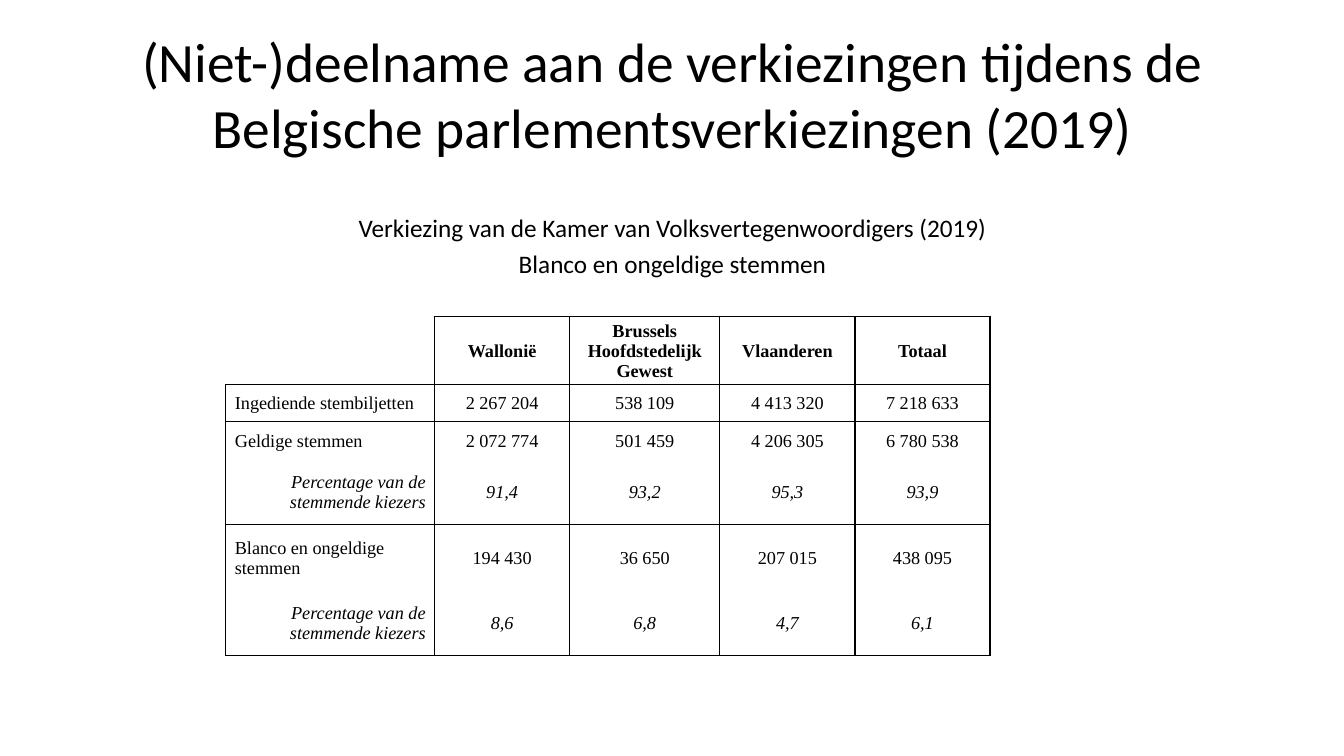
import pptx
import pptx.dml.color
import pptx.enum.text
import pptx.oxml
import pptx.oxml.ns
import pptx.util

Inches = pptx.util.Inches
Pt = pptx.util.Pt
ALIGN = pptx.enum.text.PP_ALIGN
MIDDLE = pptx.enum.text.MSO_ANCHOR.MIDDLE
COLORS = {"ink": "000000"}
SIDES = ("L", "R", "T", "B")


class Deck:
    def __init__(self, slide):
        self.slide = slide
        self.sans = "Calibri"
        self.serif = "Times New Roman"
        self.ink = pptx.dml.color.RGBColor.from_string(COLORS["ink"])

    def style(self, par, font, size, align, bold=False, slant=False):
        par.alignment = align
        for run in par.runs:
            run.font.name = font
            run.font.size = Pt(size)
            run.font.bold = bold
            run.font.italic = slant
            run.font.color.rgb = self.ink

    def text(self, lines, top, height, size, gap=0, inset=0.05, anchor=None):
        box = self.slide.shapes.add_textbox(
            Inches(0.67), Inches(top), Inches(12), Inches(height))
        frame = box.text_frame
        frame.word_wrap = True
        frame.margin_top = Inches(inset)
        frame.vertical_anchor = anchor
        frame.text = "\n".join(lines)
        for par in frame.paragraphs:
            par.space_before = Pt(gap)
            self.style(par, self.sans, size, ALIGN.CENTER)

    def border(self, cell, shown):
        props = cell._tc.get_or_add_tcPr()
        for place, side in enumerate(SIDES):
            paint = "<a:noFill/>"
            if side in shown:
                paint = f'<a:solidFill><a:srgbClr val="{COLORS["ink"]}"/></a:solidFill>'
            line = pptx.oxml.parse_xml(
                f'<a:ln{side} {pptx.oxml.ns.nsdecls("a")} w="{Pt(1)}">{paint}</a:ln{side}>')
            props.insert(place, line)

    def cell(self, cell, words, align, bold, slant, shown):
        cell.fill.background()
        cell.vertical_anchor = MIDDLE
        cell.margin_left = cell.margin_right = Inches(0.09)
        cell.margin_top, cell.margin_bottom = Inches(0.02), 0
        cell.text = words
        par = cell.text_frame.paragraphs[0]
        par.space_before = par.space_after = Pt(1)
        self.style(par, self.serif, 13, align, bold, slant)
        self.border(cell, shown)

    def table(self, rows, edges, left, top, widths, heights):
        table = self.slide.shapes.add_table(
            len(rows), len(widths), Inches(left), Inches(top),
            Inches(sum(widths)), Inches(sum(heights))).table
        table.first_row = table.horz_banding = False
        for column, width in zip(table.columns, widths):
            column.width = Inches(width)
        for row, height in zip(table.rows, heights):
            row.height = Inches(height)
        for r, row in enumerate(rows):
            share = row[0].startswith("Percentage")
            for c, words in enumerate(row):
                align = ALIGN.CENTER
                if c == 0:
                    align = ALIGN.RIGHT if share else ALIGN.LEFT
                shown = "RB" if r == c == 0 else edges[r]
                self.cell(table.cell(r, c), words, align, r == 0, share, shown)


def main():
    show = pptx.Presentation()
    show.slide_width, show.slide_height = Inches(13.33), Inches(7.5)
    deck = Deck(show.slides.add_slide(show.slide_layouts[6]))

    deck.text(["(Niet-)deelname aan de verkiezingen tijdens de "
               "Belgische parlementsverkiezingen (2019)"],
              0.3, 1.25, 39.6, anchor=MIDDLE)
    deck.text(["Verkiezing van de Kamer van Volksvertegenwoordigers (2019)",
               "Blanco en ongeldige stemmen"],
              1.75, 4.95, 18, gap=3.6, inset=0.36)

    share = "Percentage van de stemmende kiezers"
    rows = [
        ["", "Wallonië", "Brussels Hoofdstedelijk Gewest", "Vlaanderen", "Totaal"],
        ["Ingediende stembiljetten", "2 267 204", "538 109", "4 413 320", "7 218 633"],
        ["Geldige stemmen", "2 072 774", "501 459", "4 206 305", "6 780 538"],
        [share, "91,4", "93,2", "95,3", "93,9"],
        ["Blanco en ongeldige stemmen", "194 430", "36 650", "207 015", "438 095"],
        [share, "8,6", "6,8", "4,7", "6,1"],
    ]
    edges = ["LRTB", "LRTB", "LRT", "LRB", "LRT", "LRB"]
    deck.table(rows, edges, 2.24, 3.14,
               [2.07, 1.34, 1.49, 1.34, 1.34],
               [0.65, 0.37, 0.37, 0.65, 0.65, 0.65])
    show.save("out.pptx")


if __name__ == "__main__":
    main()
